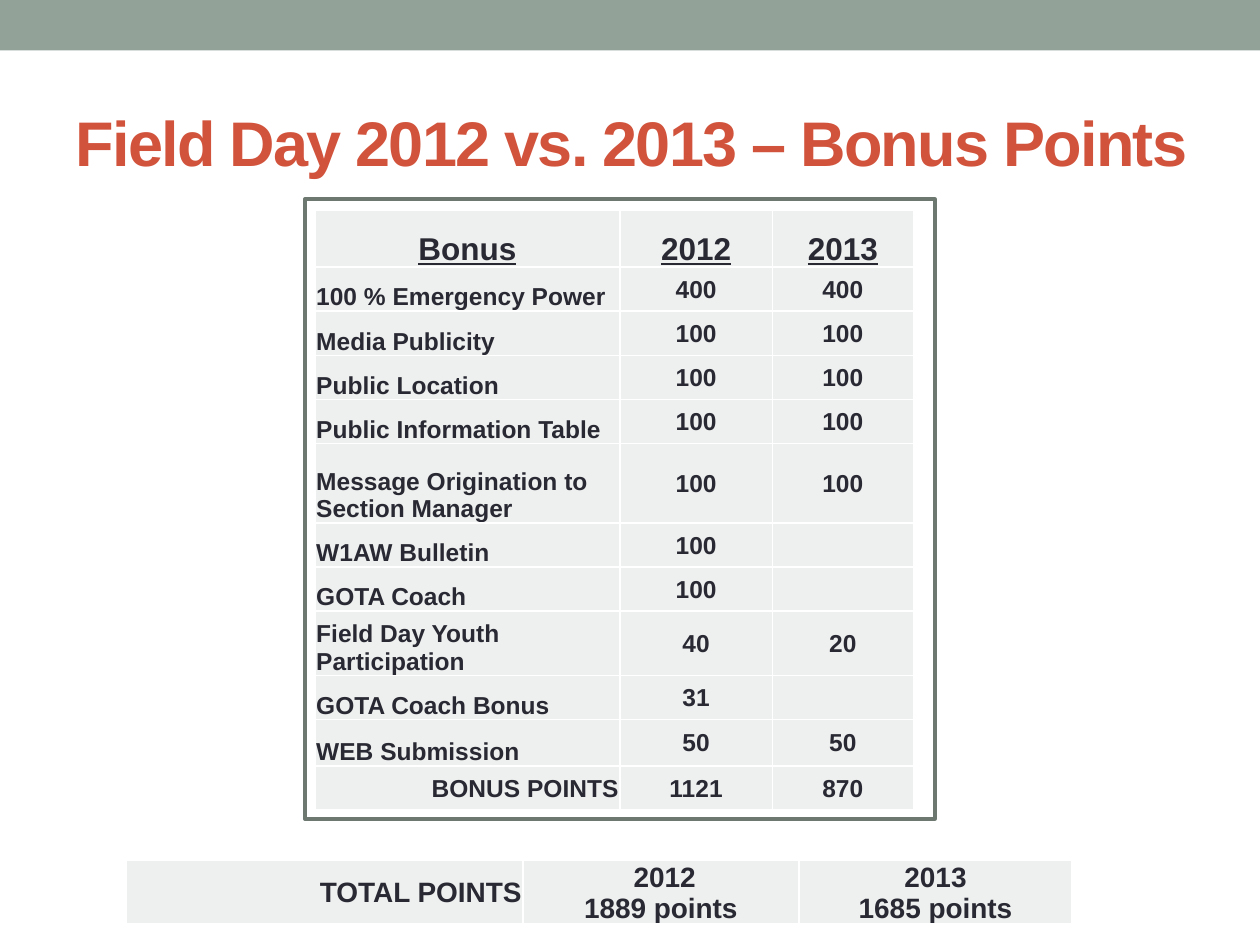
from dataclasses import dataclass
from typing import Any, Optional

from lxml.etree import SubElement
from pptx import Presentation
from pptx.dml.color import RGBColor
from pptx.enum.shapes import MSO_SHAPE
from pptx.enum.text import MSO_ANCHOR as Anchor, MSO_AUTO_SIZE, PP_ALIGN as Align
from pptx.oxml.ns import qn
from pptx.util import Inches, Pt

COLORS = {
    "band": "93A299",
    "paper": "FFFFFF",
    "frame": "6D7871",
    "title": "D2533C",
    "ink": "292934",
    "cell": "EEF0EF",
}
FONT = "Arial"
CELL_FORMAT = {
    "margin_left": Inches(0.01),
    "margin_right": Inches(0.01),
    "margin_top": Inches(0.01),
    "margin_bottom": 0,
}
TITLE_BOX = {
    "left": Inches(0.5),
    "top": Inches(0.58),
    "width": Inches(9.25),
    "height": Inches(1.08),
}
TITLE_FRAME = {
    "vertical_anchor": Anchor.MIDDLE,
    "auto_size": MSO_AUTO_SIZE.NONE,
    "word_wrap": True,
}


@dataclass
class Box:
    left: float
    top: float
    width: float
    height: float
    fill: str
    line: Optional[str] = None


@dataclass
class Row:
    texts: tuple[str, ...]
    height: float = 0.35
    size: int = 14
    underline: bool = False
    label_align: Align = Align.LEFT
    label_anchor: Anchor = Anchor.BOTTOM
    value_anchor: Anchor = Anchor.MIDDLE


@dataclass
class Grid:
    left: float
    top: float
    cols: tuple[float, ...]
    rows: list[Row]


BOXES = [
    Box(0, 0, 10, 0.4, "band"),
    Box(2.42, 1.58, 5, 4.92, "paper", "frame"),
]
TOTAL = {"label_align": Align.RIGHT, "label_anchor": Anchor.MIDDLE}
BONUS = Grid(2.5, 1.67, (2.42, 1.21, 1.12), [
    Row(("Bonus", "2012", "2013"), 0.45, 18, True, Align.CENTER, value_anchor=Anchor.BOTTOM),
    Row(("100 % Emergency Power", "400", "400")),
    Row(("Media Publicity", "100", "100")),
    Row(("Public Location", "100", "100")),
    Row(("Public Information Table", "100", "100")),
    Row(("Message Origination to Section Manager", "100", "100"), 0.63),
    Row(("W1AW Bulletin", "100", "")),
    Row(("GOTA Coach", "100", "")),
    Row(("Field Day Youth Participation", "40", "20"), 0.51),
    Row(("GOTA Coach Bonus", "31", "")),
    Row(("WEB Submission", "50", "50"), 0.37),
    Row(("BONUS POINTS", "1121", "870"), **TOTAL),
])
TOTALS = Grid(1, 6.83, (3.15, 2.19, 2.17), [
    Row(("TOTAL POINTS", " 2012\n1889 points", "2013\n1685 points"), 0.38, 16, **TOTAL),
])


def rgb(name: str) -> RGBColor:
    return RGBColor.from_string(COLORS[name])


def apply(target: Any, values: dict[str, Any]) -> None:
    for name, value in values.items():
        setattr(target, name, value)


def write(p: Any, text: str, color: str, **font: Any) -> None:
    p.text = text
    for r in p.runs:
        apply(r.font, {"name": FONT, "bold": True, **font})
        r.font.color.rgb = rgb(color)


def add_box(slide: Any, box: Box) -> None:
    sp = slide.shapes.add_shape(
        MSO_SHAPE.RECTANGLE, *map(Inches, (box.left, box.top, box.width, box.height)))
    sp.shadow.inherit = False
    sp.fill.solid()
    sp.fill.fore_color.rgb = rgb(box.fill)
    if box.line:
        sp.line.color.rgb = rgb(box.line)
        sp.line.width = Pt(2.08)
    else:
        sp.line.fill.background()


def add_borders(cell: Any) -> None:
    tc_pr = cell._tc.get_or_add_tcPr()
    for side in ("a:lnL", "a:lnR", "a:lnT", "a:lnB"):
        ln = SubElement(tc_pr, qn(side), w=str(Pt(1)))
        fill = SubElement(ln, qn("a:solidFill"))
        SubElement(fill, qn("a:srgbClr"), val=COLORS["paper"])


def fill_cell(cell: Any, row: Row, col: int) -> None:
    label = col == 0
    add_borders(cell)
    cell.fill.solid()
    cell.fill.fore_color.rgb = rgb("cell")
    anchor = row.label_anchor if label else row.value_anchor
    apply(cell, {**CELL_FORMAT, "vertical_anchor": anchor})
    p = cell.text_frame.paragraphs[0]
    p.alignment = row.label_align if label else Align.CENTER
    write(p, row.texts[col], "ink", size=Pt(row.size), underline=row.underline)


def add_grid(slide: Any, grid: Grid) -> None:
    height = sum(row.height for row in grid.rows)
    table = slide.shapes.add_table(
        len(grid.rows), len(grid.cols),
        *map(Inches, (grid.left, grid.top, sum(grid.cols), height))).table
    apply(table, {"first_row": False, "horz_banding": False})
    for column, width in zip(table.columns, grid.cols):
        column.width = Inches(width)
    for i, row in enumerate(grid.rows):
        table.rows[i].height = Inches(row.height)
        for col in range(len(grid.cols)):
            fill_cell(table.cell(i, col), row, col)


def set_title(slide: Any, text: str) -> None:
    title = slide.shapes.title
    apply(title, TITLE_BOX)
    tf = title.text_frame
    apply(tf, TITLE_FRAME)
    p = tf.paragraphs[0]
    write(p, text, "title", size=Pt(36))
    p.alignment = Align.LEFT
    for r in p.runs:
        r.font._element.set("spc", "-100")


def main() -> None:
    prs = Presentation()
    apply(prs, {"slide_width": Inches(10), "slide_height": Inches(7.5)})
    slide = prs.slides.add_slide(prs.slide_layouts[5])
    set_title(slide, "Field Day 2012 vs. 2013 – Bonus Points")
    for box in BOXES:
        add_box(slide, box)
    for grid in (BONUS, TOTALS):
        add_grid(slide, grid)
    prs.save("out.pptx")


if __name__ == "__main__":
    main()
